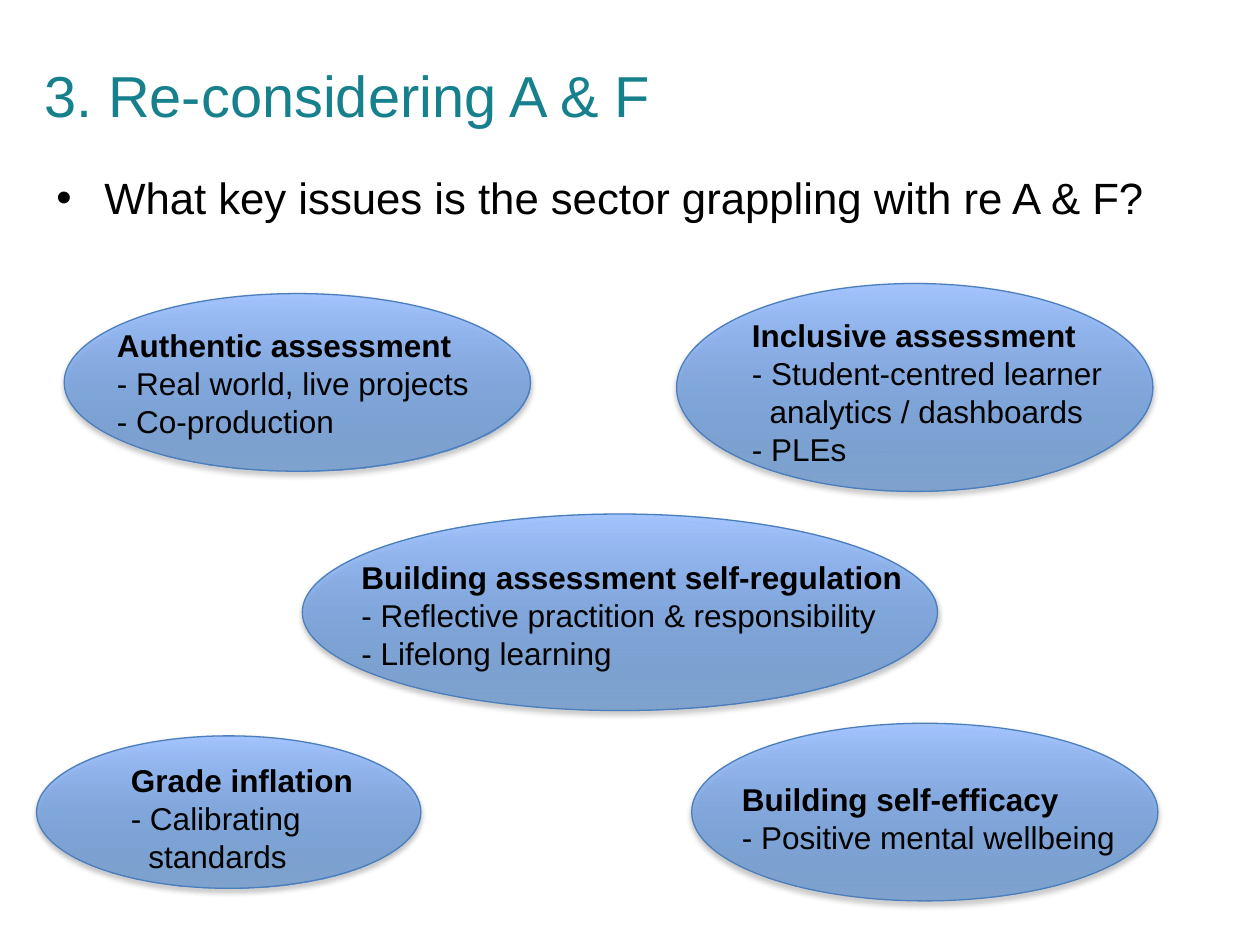
from dataclasses import dataclass

from lxml import etree
from pptx import Presentation
from pptx.dml.color import RGBColor
from pptx.enum import shapes
from pptx.oxml import ns
from pptx.util import Inches, Pt


@dataclass(frozen=True)
class Theme:
    font: str = "Arial"
    title: RGBColor = RGBColor(0x16, 0x81, 0x8D)
    text: RGBColor = RGBColor(0, 0, 0)
    line: RGBColor = RGBColor(0x4B, 0x7E, 0xBC)
    grad_low: RGBColor = RGBColor(0x3F, 0x80, 0xCE)
    grad_high: RGBColor = RGBColor(0xA4, 0xC4, 0xFF)
    title_size: int = 33
    question_size: int = 25
    issue_size: int = 18


THEME = Theme()

# Each issue: ellipse box, text box, heading and lines
ISSUES = [
    ((2.4, 4.08, 5.04, 1.56), (2.77, 4.38, 4.57, 1.01),
     ["Building assessment self-regulation",
      "- Reflective practition & responsibility", "- Lifelong learning"]),
    ((5.49, 5.74, 3.7, 1.41), (5.79, 6.14, 3.23, 0.71),
     ["Building self-efficacy", "- Positive mental wellbeing"]),
    ((0.29, 5.84, 3.05, 1.21), (0.94, 5.99, 2.83, 1.01),
     ["Grade inflation", "- Calibrating", "standards"]),
    ((5.37, 2.25, 3.78, 1.65), (5.87, 2.46, 3.94, 1.31),
     ["Inclusive assessment", "- Student-centred learner",
      "analytics / dashboards", "- PLEs"]),
    ((0.51, 2.33, 3.7, 1.41), (0.83, 2.54, 3.15, 1.01),
     ["Authentic assessment", "- Real world, live projects",
      "- Co-production"]),
]


def add_child(parent, tag, **attrs):
    child = etree.SubElement(parent, ns.qn(tag))
    for name, value in attrs.items():
        child.set(name, str(value))
    return child


def add_text(slide, box, lines, size, color):
    sp = slide.shapes.add_textbox(*map(Inches, box))
    tf = sp.text_frame
    tf.word_wrap = True
    tf.text = "\n".join(lines)
    for p in tf.paragraphs:
        for r in p.runs:
            r.font.name = THEME.font
            r.font.size = Pt(size)
            r.font.color.rgb = color
    return tf


def indent(p, left, first=0):
    pPr = p._p.get_or_add_pPr()
    pPr.set("marL", str(Inches(left)))
    pPr.set("indent", str(Inches(first)))
    return pPr


def add_title(slide):
    tf = add_text(slide, (0.35, 0.36, 7.8, 0.71), ["3. Re-considering A & F"],
                  THEME.title_size, THEME.title)
    tf.margin_left = tf.margin_top = tf.margin_right = tf.margin_bottom = 0
    tf.paragraphs[0].line_spacing = Pt(48)


def add_question(slide):
    tf = add_text(slide, (0.35, 1.31, 9.06, 0.94),
                  ["What key issues is the sector grappling with re A & F?"],
                  THEME.question_size, THEME.text)
    pPr = indent(tf.paragraphs[0], 0.38, -0.38)
    add_child(pPr, "a:buFont", typeface=THEME.font)
    add_child(pPr, "a:buChar", char="•")


def add_ellipse(slide, box):
    s = slide.shapes.add_shape(shapes.MSO_SHAPE.OVAL, *map(Inches, box))
    s.line.color.rgb = THEME.line
    s.line.width = Pt(0.75)

    # Light at the top, half-transparent blue at the bottom
    s.fill.gradient()
    s.fill.gradient_angle = 90
    low, high = s.fill.gradient_stops
    low.color.rgb, low.position = THEME.grad_low, 0
    high.color.rgb, high.position = THEME.grad_high, 1
    low_rgb = s._element.spPr.find(".//" + ns.qn("a:srgbClr"))
    add_child(low_rgb, "a:alpha", val=54000)

    # Soft shadow straight below
    s.shadow.inherit = False
    effects = s._element.spPr.find(ns.qn("a:effectLst"))
    shadow = add_child(effects, "a:outerShdw", blurRad=Pt(3.1), dist=Pt(1.8),
                       dir=5400000, rotWithShape=0)
    black = add_child(shadow, "a:srgbClr", val="000000")
    add_child(black, "a:alpha", val=35000)


def add_issue_text(slide, box, lines):
    tf = add_text(slide, box, lines, THEME.issue_size, THEME.text)
    heading, *points = tf.paragraphs
    heading.runs[0].font.bold = True
    for p in points:
        if not p.text.startswith("-"):
            indent(p, 0.14)  # continues the point above


def main():
    prs = Presentation()
    prs.slide_width, prs.slide_height = Inches(10), Inches(7.5)
    slide = prs.slides.add_slide(prs.slide_layouts[6])

    # Ellipses lie behind all text
    for ellipse, _, _ in ISSUES:
        add_ellipse(slide, ellipse)
    add_title(slide)
    add_question(slide)
    for _, box, lines in ISSUES:
        add_issue_text(slide, box, lines)

    prs.save("out.pptx")


if __name__ == "__main__":
    main()
